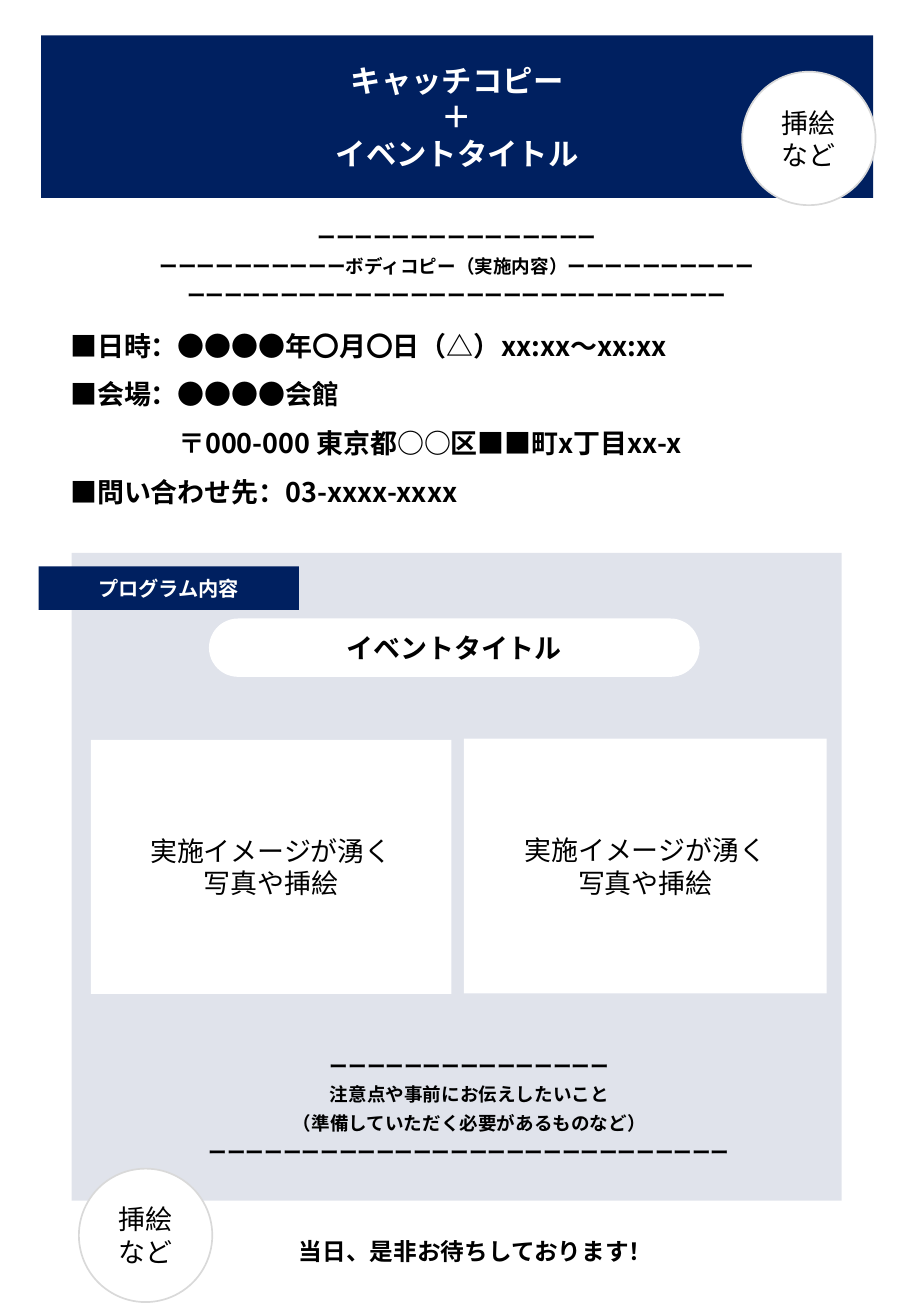
"""Build a one-page Japanese event flyer template."""
from lxml.etree import SubElement
from pptx import Presentation
from pptx.dml.color import RGBColor
from pptx.enum.shapes import MSO_SHAPE as Shape
from pptx.enum.text import MSO_ANCHOR as Anchor, MSO_AUTO_SIZE as Fit, PP_ALIGN as Align
from pptx.oxml.ns import qn
from pptx.util import Cm, Pt

FONT = "Noto Sans CJK JP"
NAVY, WHITE, BLACK, GREY = "002060", "FFFFFF", "000000", "D9D9D9"
LEAD = Pt(17)

HEADLINE = ["キャッチコピー", "＋", "イベントタイトル"]
DETAILS = [
    "■日時：●●●●年〇月〇日（△）xx:xx～xx:xx",
    "■会場：●●●●会館",
    "〒000-000 東京都○○区■■町x丁目xx-x",
    "■問い合わせ先：03-xxxx-xxxx",
]
ADDRESS_LINE, ADDRESS_INDENT = 2, Pt(64)
BODY_COPY = [
    "ー" * 15,
    "ー" * 10 + "ボディコピー（実施内容）" + "ー" * 10,
    "ー" * 29,
]
NOTES = [
    "ー" * 15,
    "注意点や事前にお伝えしたいこと",
    "（準備していただく必要があるものなど）",
    "ー" * 28,
]
PHOTO = ["実施イメージが湧く", "写真や挿絵"]
PHOTO_BOXES = [(1.9, 15.47, 7.54, 5.31), (9.7, 15.44, 7.59, 5.33)]
BADGE, BADGE_SIZE = ["挿絵など"], 2.79
BADGE_CORNERS = [(15.52, 1.5), (1.65, 24.43)]


def color(target, value):
    target.rgb = RGBColor.from_string(value)


def write(shape, lines, size, ink=BLACK, bold=True, align=Align.CENTER, spacing=None):
    frame = shape.text_frame
    frame.word_wrap = True
    for number, line in enumerate(lines):
        para = frame.paragraphs[0] if number == 0 else frame.add_paragraph()
        para.alignment = align
        if spacing:
            para.line_spacing = spacing
        span = para.add_run()
        span.text = line
        for name, value in {"size": Pt(size), "bold": bold, "name": FONT}.items():
            setattr(span.font, name, value)
        color(span.font.color, ink)
        SubElement(span.font._element, qn("a:ea"), typeface=FONT)


def add_panel(page, kind, box, fill, outline=None):
    shape = page.shapes.add_shape(kind, *map(Cm, box))
    shape.shadow.inherit = False
    shape.fill.solid()
    color(shape.fill.fore_color, fill)
    if outline:
        color(shape.line.color, outline)
        shape.line.width = Pt(1)
    else:
        shape.line.fill.background()
    shape.text_frame.vertical_anchor = Anchor.MIDDLE
    return shape


def add_text(page, box, lines, size, inset=None, **style):
    shape = page.shapes.add_textbox(*map(Cm, box))
    write(shape, lines, size, **style)
    shape.text_frame.auto_size = Fit.SHAPE_TO_FIT_TEXT
    if inset is not None:
        for side in ("left", "top", "right", "bottom"):
            setattr(shape.text_frame, f"margin_{side}", Cm(inset))
    return shape


def main():
    deck = Presentation()
    deck.slide_width, deck.slide_height = Cm(19.05), Cm(27.51)
    page = deck.slides.add_slide(deck.slide_layouts[6])

    details = add_text(page, (1.37, 6.45, 16.89, 4.24), DETAILS, 16, 0.1,
                       align=Align.LEFT, spacing=1.5)
    address = details.text_frame.paragraphs[ADDRESS_LINE]
    address._p.get_or_add_pPr().set("marL", str(ADDRESS_INDENT))

    banner = add_panel(page, Shape.RECTANGLE, (0.86, 0.74, 17.4, 3.4), NAVY)
    write(banner, HEADLINE, 18, WHITE)
    add_text(page, (0.86, 4.52, 17.4, 1.93), BODY_COPY, 11, 0.08, spacing=LEAD)

    program = add_panel(page, Shape.RECTANGLE, (1.5, 11.56, 16.1, 13.54), NAVY)
    tint = program.fill._xPr.find(".//" + qn("a:srgbClr"))
    SubElement(tint, qn("a:alpha"), val="12000")

    title = add_panel(page, Shape.ROUNDED_RECTANGLE, (4.37, 12.93, 10.26, 1.22), WHITE)
    title.adjustments[0] = 0.5
    write(title, ["イベントタイトル"], 16)
    tag = add_panel(page, Shape.RECTANGLE, (0.81, 11.84, 5.44, 0.91), NAVY)
    write(tag, ["プログラム内容"], 12, WHITE)

    add_text(page, (1.3, 21.79, 17.04, 2.64), NOTES, 11, spacing=LEAD)
    add_text(page, (6.17, 25.78, 12.17, 0.66), ["当日、是非お待ちしております！"], 14, 0.08,
             align=Align.LEFT, spacing=LEAD)

    for box in PHOTO_BOXES:
        write(add_panel(page, Shape.RECTANGLE, box, WHITE), PHOTO, 16, bold=False)
    for corner in BADGE_CORNERS:
        badge = add_panel(page, Shape.OVAL, (*corner, BADGE_SIZE, BADGE_SIZE), WHITE, GREY)
        write(badge, BADGE, 16, bold=False)

    deck.save("out.pptx")


if __name__ == "__main__":
    main()
